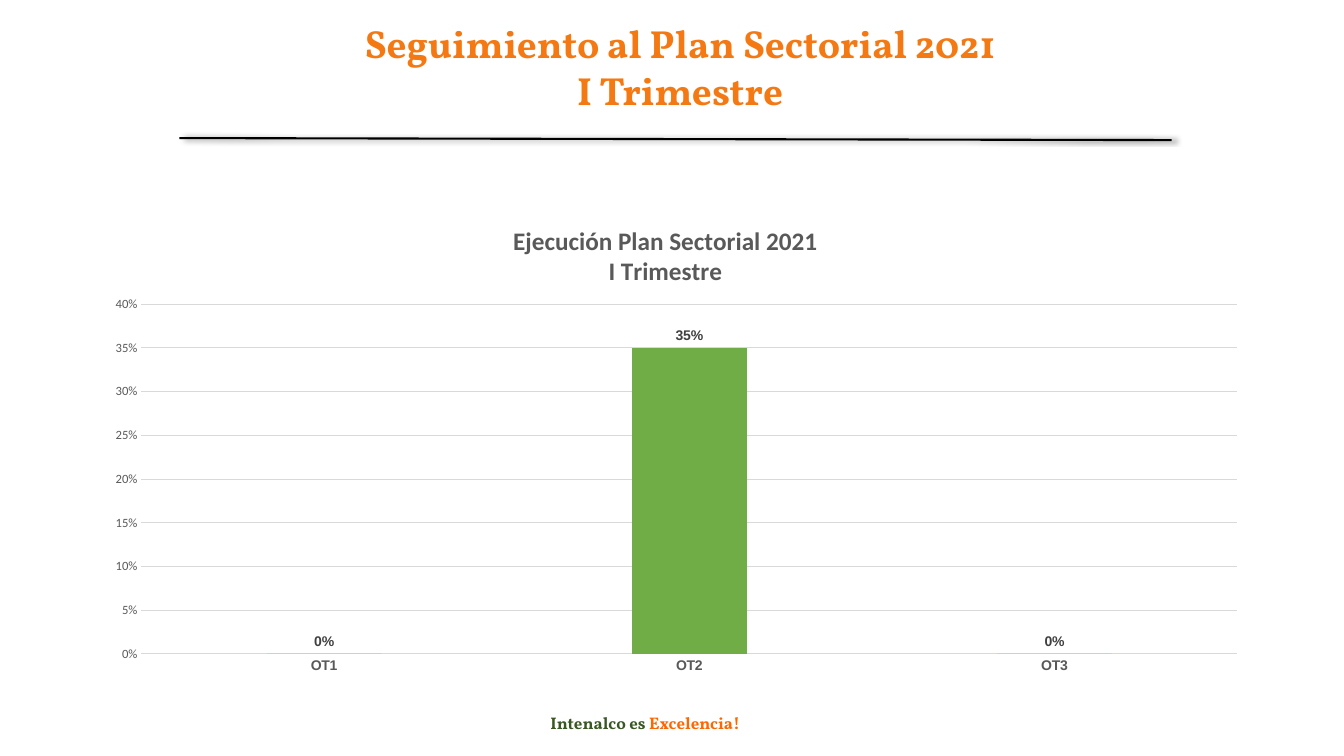
from dataclasses import dataclass

from lxml.etree import SubElement
from pptx import Presentation
from pptx.chart.data import CategoryChartData
from pptx.dml.color import RGBColor
from pptx.enum.chart import XL_CHART_TYPE, XL_LABEL_POSITION, XL_TICK_MARK
from pptx.enum.shapes import MSO_CONNECTOR
from pptx.enum.text import MSO_ANCHOR, MSO_AUTO_SIZE, PP_ALIGN
from pptx.oxml import parse_xml
from pptx.oxml.ns import nsdecls, qn
from pptx.util import Inches, Pt

# Content
TITLE = ["Seguimiento al Plan Sectorial 2021", "I Trimestre"]
CHART_TITLE = ["Ejecución Plan Sectorial 2021", "I Trimestre"]
EXECUTION = {"OT1": 0, "OT2": 0.35, "OT3": 0}
HIGHLIGHT = "OT2"
MOTTO = ("Intenalco es ", "Excelencia!")


@dataclass(frozen=True)
class Theme:
    display: str = "Vollkorn"
    body: str = "Calibri"
    label: str = "Arial"
    orange: str = "F57913"
    motto_green: str = "385723"
    motto_orange: str = "FF6600"
    bar: str = "5B9BD5"
    bar_highlight: str = "70AD47"
    gray: str = "595959"
    dark: str = "404040"
    grid: str = "D9D9D9"
    black: str = "000000"
    title_size: int = 28
    chart_title_size: int = 18
    motto_size: int = 12
    label_size: int = 10
    axis_size: int = 9


THEME = Theme()


def color(value):
    return RGBColor.from_string(value)


def style(font, *, name, size, fill, bold=False):
    font.name, font.size, font.bold = name, Pt(size), bold
    font.color.rgb = color(fill)


def write(frame, paragraphs, **text_format):
    """Each paragraph is a list of (text, color) runs."""
    for index, runs in enumerate(paragraphs):
        paragraph = frame.add_paragraph() if index else frame.paragraphs[0]
        paragraph.alignment = PP_ALIGN.CENTER
        for text, fill in runs:
            run = paragraph.add_run()
            run.text = text
            style(run.font, fill=fill, **text_format)


def place(shape, left, top, width, height):
    shape.left, shape.top = Inches(left), Inches(top)
    shape.width, shape.height = Inches(width), Inches(height)


def set_layout(parent, position, **fractions):
    """Fix a chart part at fractions of the chart area."""
    for old in parent.findall(qn("c:layout")):
        parent.remove(old)
    layout = parse_xml(f"<c:layout {nsdecls('c')}/>")
    manual = SubElement(layout, qn("c:manualLayout"))
    if "w" in fractions:
        SubElement(manual, qn("c:layoutTarget")).set("val", "inner")
    for axis in "xy":
        SubElement(manual, qn(f"c:{axis}Mode")).set("val", "edge")
    for key, value in fractions.items():
        SubElement(manual, qn(f"c:{key}")).set("val", str(value))
    parent.insert(position, layout)


def add_rule(slide):
    rule = slide.shapes.add_connector(
        MSO_CONNECTOR.STRAIGHT, Inches(1.78), Inches(1.37), Inches(11.62), Inches(1.39))
    rule.line.color.rgb = color(THEME.black)
    rule.line.width = Pt(1.5)
    rule._element.spPr.append(parse_xml(
        f'<a:effectLst {nsdecls("a")}>'
        f'<a:outerShdw blurRad="{Pt(4)}" dist="{Pt(3)}" dir="0" algn="l" rotWithShape="0">'
        f'<a:srgbClr val="{THEME.black}"><a:alpha val="40000"/></a:srgbClr>'
        '</a:outerShdw></a:effectLst>'))


def add_execution_chart(slide):
    data = CategoryChartData(number_format="0%")
    data.categories = list(EXECUTION)
    data.add_series("Series 1", list(EXECUTION.values()))
    chart = slide.shapes.add_chart(
        XL_CHART_TYPE.COLUMN_CLUSTERED, Inches(0.92), Inches(2), Inches(11.5), Inches(4.76),
        data).chart
    chart.has_legend = False
    style(chart.font, name=THEME.body, size=THEME.label_size, fill=THEME.black)

    # Chart title and plot position
    chart.has_title = True
    write(chart.chart_title.text_frame, [[(line, THEME.gray)] for line in CHART_TITLE],
          name=THEME.body, size=THEME.chart_title_size, bold=True)
    set_layout(chart.chart_title._element, 1, x=0.36, y=0.04)
    set_layout(chart._chartSpace.chart.plotArea, 0, x=0.042, y=0.214, w=0.945, h=0.729)

    # Axes
    categories, values = chart.category_axis, chart.value_axis
    for axis in (categories, values):
        axis.major_tick_mark = axis.minor_tick_mark = XL_TICK_MARK.NONE
    style(categories.tick_labels.font, name=THEME.label, size=THEME.label_size,
          fill=THEME.gray, bold=True)
    style(values.tick_labels.font, name=THEME.body, size=THEME.axis_size, fill=THEME.gray)
    values.minimum_scale, values.maximum_scale, values.major_unit = 0, 0.4, 0.05
    values.tick_labels.number_format = "0%"
    values.tick_labels.number_format_is_linked = False
    values.format.line.fill.background()
    for line in (categories.format.line, values.major_gridlines.format.line):
        line.color.rgb = color(THEME.grid)
        line.width = Pt(0.75)

    # Bars and their labels
    plot = chart.plots[0]
    plot.gap_width, plot.overlap, plot.vary_by_categories = 219, -27, False
    series = plot.series[0]
    series.format.fill.solid()
    series.format.fill.fore_color.rgb = color(THEME.bar)
    highlight = series.points[list(EXECUTION).index(HIGHLIGHT)].format.fill
    highlight.solid()
    highlight.fore_color.rgb = color(THEME.bar_highlight)
    labels = series.data_labels
    labels.show_value = True
    labels.number_format, labels.number_format_is_linked = "0%", False
    labels.position = XL_LABEL_POSITION.OUTSIDE_END
    style(labels.font, name=THEME.label, size=THEME.label_size, fill=THEME.dark, bold=True)


def main():
    presentation = Presentation()
    presentation.slide_width, presentation.slide_height = Inches(13.33), Inches(7.5)
    slide = presentation.slides.add_slide(presentation.slide_layouts[5])

    # Title
    title = slide.shapes.title
    place(title, 1.93, 0.14, 9.63, 1.04)
    title.text_frame.vertical_anchor = MSO_ANCHOR.TOP
    title.text_frame.auto_size = MSO_AUTO_SIZE.NONE
    write(title.text_frame, [[(line, THEME.orange)] for line in TITLE],
          name=THEME.display, size=THEME.title_size, bold=True)

    add_rule(slide)
    add_execution_chart(slide)

    # Motto
    motto = slide.shapes.add_textbox(Inches(4.8), Inches(7.02), Inches(3.2), Inches(0.3))
    motto.text_frame.word_wrap = True
    write(motto.text_frame, [list(zip(MOTTO, (THEME.motto_green, THEME.motto_orange)))],
          name=THEME.display, size=THEME.motto_size, bold=True)

    presentation.save("out.pptx")


if __name__ == "__main__":
    main()
